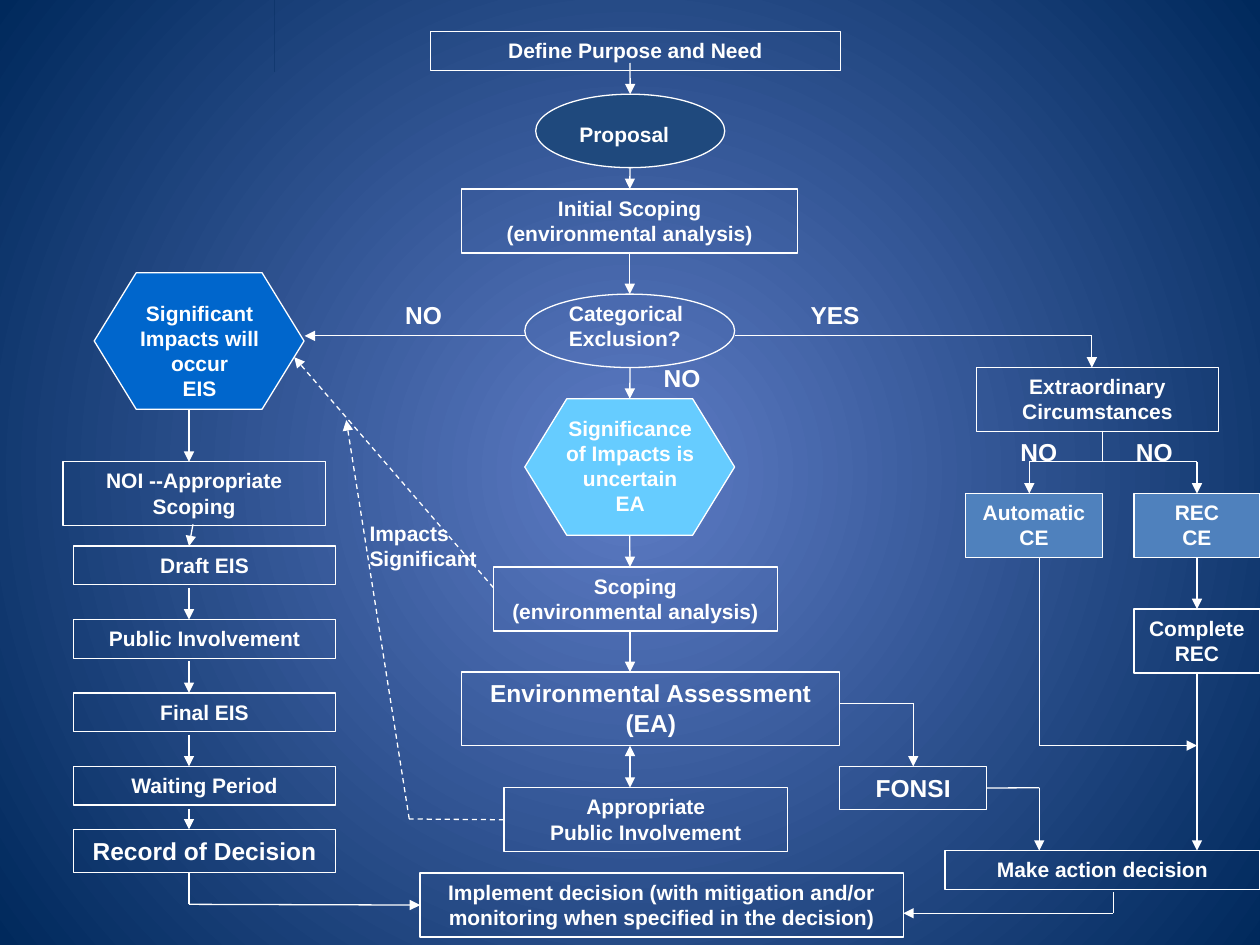
from lxml.etree import SubElement
from pptx import Presentation
from pptx.dml.color import RGBColor
from pptx.enum.dml import MSO_LINE
from pptx.enum.shapes import MSO_CONNECTOR, MSO_SHAPE
from pptx.enum.text import MSO_ANCHOR, MSO_AUTO_SIZE, PP_ALIGN
from pptx.oxml.ns import qn
from pptx.shapes.autoshape import Shape
from pptx.util import Cm, Pt

WHITE = RGBColor(0xFF, 0xFF, 0xFF)
GLOW = RGBColor(0x5E, 0x7C, 0xC5)
NAVY = RGBColor(0x00, 0x29, 0x5C)
DARK_BLUE = RGBColor(0x1F, 0x49, 0x7D)
SKY = RGBColor(0x66, 0xCC, 0xFF)
BLUE = RGBColor(0x00, 0x66, 0xCC)
STEEL = RGBColor(0x4F, 0x81, 0xBD)

TOP, LEFT, BOTTOM, RIGHT = range(4)
ONE_LINE, ONE_LARGE, TWO_LINES, TWO_LARGE = 0.78, 0.87, 1.29, 1.48
MAIN_X, EIS_X, REC_X = 12.7, 3.81, 24.13


def paint_background(s):
    """Fill the slide with a gradient that spreads from its centre."""
    fill = s.background.fill
    fill.gradient()
    for stop, color in zip(fill.gradient_stops, (GLOW, NAVY)):
        stop.color.rgb = color
    grad = s._element.find(".//" + qn("a:gradFill"))
    grad.remove(grad.find(qn("a:lin")))
    circle = SubElement(grad, qn("a:path"), {"path": "circle"})
    SubElement(circle, qn("a:fillToRect"), dict.fromkeys("ltrb", "50000"))


def add_title_band(s):
    """Add the band at the top, which takes the slide background as its fill."""
    sp = s.shapes.add_shape(MSO_SHAPE.RECTANGLE, Cm(5.54), 0, Cm(19.86), Cm(1.45))
    sp._element.remove(sp._element.find(qn("p:style")))
    sp._element.set("useBgFill", "1")


def write(sp, text, size, align):
    tf = sp.text_frame
    tf.word_wrap = True
    tf.auto_size = MSO_AUTO_SIZE.SHAPE_TO_FIT_TEXT
    tf.vertical_anchor = MSO_ANCHOR.TOP
    p = tf.paragraphs[0]
    p.text = text.replace("\n", "\v")
    p.alignment = align
    p.font.name = "Arial"
    p.font.size = Pt(size)
    p.font.bold = True
    p.font.color.rgb = WHITE


def add_outline(s, kind, x, y, w, h, color=None):
    sp = s.shapes.add_shape(kind, Cm(x), Cm(y), Cm(w), Cm(h))
    sp.shadow.inherit = False
    if color is None:
        sp.fill.background()
    else:
        sp.fill.solid()
        sp.fill.fore_color.rgb = color
    sp.line.color.rgb = WHITE
    sp.line.width = Pt(0.75)
    return sp


def add_box(s, text, x, y, w, h, color=None):
    sp = add_outline(s, MSO_SHAPE.RECTANGLE, x, y, w, h, color)
    size = 14 if h in (ONE_LARGE, TWO_LARGE) else 12
    write(sp, text, size, PP_ALIGN.CENTER)
    return sp


def add_label(s, text, x, y, w, h, size=12, align=PP_ALIGN.LEFT):
    tb = s.shapes.add_textbox(Cm(x), Cm(y), Cm(w), Cm(h))
    write(tb, text, size, align)


def add_route(s, *stops, head=False, tail=True, dashed=False):
    """Join the stops, each an (x, y) point or a (box, side) pair, by lines."""
    last = len(stops) - 2
    for i, (start, end) in enumerate(zip(stops, stops[1:])):
        start_joined, end_joined = (isinstance(stop[0], Shape) for stop in (start, end))
        x1, y1 = (0, 0) if start_joined else start
        x2, y2 = (0, 0) if end_joined else end
        line = s.shapes.add_connector(
            MSO_CONNECTOR.STRAIGHT, Cm(x1), Cm(y1), Cm(x2), Cm(y2))
        if start_joined:
            line.begin_connect(*start)
        if end_joined:
            line.end_connect(*end)
        line.line.color.rgb = WHITE
        line.line.width = Pt(0.75)
        if dashed:
            line.line.dash_style = MSO_LINE.DASH
        ln = line.line._get_or_add_ln()
        if head and i == 0:
            SubElement(ln, qn("a:headEnd"), {"type": "triangle"})
        if tail and i == last:
            SubElement(ln, qn("a:tailEnd"), {"type": "triangle"})
        SubElement(line._element.spPr, qn("a:effectLst"))


def add_main_column(s):
    add_box(s, "Define Purpose and Need", 8.68, 0.64, 8.26, ONE_LINE)
    proposal = add_outline(s, MSO_SHAPE.OVAL, 10.8, 1.9, 3.81, 1.48, DARK_BLUE)
    add_label(s, "Proposal", 11.43, 2.33, 3.39, 0.76)
    initial = add_box(s, "Initial Scoping\n(environmental analysis)",
                      9.31, 3.81, 6.77, TWO_LINES)
    exclusion = add_outline(s, MSO_SHAPE.OVAL, 10.58, 5.93, 4.23, 1.48)
    add_label(s, "Categorical\nExclusion?", 11.22, 5.93, 4.66, 1.27)
    uncertain = add_outline(s, MSO_SHAPE.FLOWCHART_PREPARATION,
                            10.58, 8.04, 4.23, 2.75, SKY)
    add_label(s, "Significance of Impacts is uncertain\nEA",
              11.01, 8.25, 3.39, 2.29, align=PP_ALIGN.CENTER)
    add_box(s, "Scoping\n(environmental analysis)", 9.95, 11.43, 5.72, TWO_LINES)
    add_box(s, "Environmental Assessment\n(EA)", 9.31, 13.55, 7.62, TWO_LARGE)
    involvement = add_box(s, "Appropriate\nPublic Involvement",
                          10.16, 15.88, 5.72, TWO_LINES)

    add_route(s, (MAIN_X, 1.27), (proposal, TOP))
    add_route(s, (MAIN_X, 3.39), (initial, TOP))
    add_route(s, (initial, BOTTOM), (exclusion, TOP))
    add_route(s, (MAIN_X, 7.41), (uncertain, TOP))
    add_route(s, (uncertain, BOTTOM), (MAIN_X, 11.43))
    add_route(s, (MAIN_X, 12.7), (MAIN_X, 13.55))
    add_route(s, (MAIN_X, 15.03), (MAIN_X, 15.88), head=True)
    add_route(s, (9.95, 11.85), (5.93, 7.2), dashed=True)
    add_route(s, (involvement, LEFT), (8.25, 16.51), (6.98, 8.47), dashed=True)
    add_label(s, "Impacts\nSignificant", 7.2, 10.37, 4.02, 1.27)


def add_eis_column(s):
    add_outline(s, MSO_SHAPE.FLOWCHART_PREPARATION, 1.9, 5.5, 4.23, 2.75, BLUE)
    add_label(s, "Significant Impacts will occur\nEIS",
              2.33, 5.93, 3.39, 2.29, align=PP_ALIGN.CENTER)
    add_box(s, "NOI --Appropriate Scoping", 1.27, 9.31, 5.29, TWO_LINES)
    steps = ["Draft EIS", "Public Involvement", "Final EIS", "Waiting Period"]
    pitch = 1.48
    for i, step in enumerate(steps):
        y = 11.01 + i * pitch
        add_box(s, step, 1.48, y, 5.29, ONE_LINE)
        if i:
            add_route(s, (EIS_X, y - 0.64), (EIS_X, y))
    add_box(s, "Record of Decision", 1.48, 16.72, 5.29, ONE_LARGE)

    add_route(s, (10.58, 6.77), (6.14, 6.77))
    add_route(s, (EIS_X, 8.25), (EIS_X, 9.31))
    add_route(s, (3.89, 10.57), (EIS_X, 11.01))
    add_route(s, (EIS_X, 16.3), (EIS_X, 16.72))


def add_exclusion_column(s):
    add_box(s, "Extraordinary\nCircumstances", 19.69, 7.41, 4.87, TWO_LINES)
    add_box(s, "Automatic\nCE", 19.47, 9.95, 2.75, TWO_LINES, STEEL)
    rec = add_box(s, "REC\nCE", 22.86, 9.95, 2.54, TWO_LINES, STEEL)
    complete = add_box(s, "Complete\nREC", 22.86, 12.28, 2.54, TWO_LINES)

    add_route(s, (14.82, 6.77), (22.01, 6.77), (22.01, 7.41))
    add_route(s, (22.23, 8.68), (22.23, 9.31), tail=False)
    add_route(s, (22.23, 9.31), (20.75, 9.31), (20.75, 9.95))
    add_route(s, (22.23, 9.31), (REC_X, 9.31), (rec, TOP))
    add_route(s, (rec, BOTTOM), (complete, TOP))
    add_route(s, (complete, BOTTOM), (REC_X, 17.15))
    add_route(s, (20.95, 11.23), (20.95, 15.03), (REC_X, 15.03))


def add_decisions(s):
    fonsi = add_box(s, "FONSI", 16.93, 15.45, 2.96, ONE_LARGE)
    add_box(s, "Make action decision", 19.05, 17.15, 6.35, ONE_LINE)
    implement = add_box(
        s, "Implement decision (with mitigation and/or monitoring "
        "when specified in the decision)", 8.47, 17.6, 9.74, TWO_LINES)

    add_route(s, (16.93, 14.18), (18.41, 14.18), (fonsi, TOP))
    add_route(s, (fonsi, RIGHT), (20.95, 15.88), (20.95, 17.15))
    add_route(s, (EIS_X, 17.58), (EIS_X, 18.23), (implement, LEFT))
    add_route(s, (22.44, 17.99), (22.44, 18.41), (18.21, 18.41))


def add_answers(s):
    for text, x, y, w in [("NO", 7.92, 5.93, 2.65), ("YES", 16.09, 5.93, 3.18),
                          ("NO", 13.13, 7.2, 2.75), ("NO", 20.32, 8.68, 3.18),
                          ("NO", 22.65, 8.68, 3.18)]:
        add_label(s, text, x, y, w, 0.85, size=14)


def main():
    prs = Presentation()
    prs.slide_width, prs.slide_height = Cm(25.4), Cm(19.05)
    s = prs.slides.add_slide(prs.slide_layouts[6])
    paint_background(s)
    add_title_band(s)
    add_main_column(s)
    add_eis_column(s)
    add_exclusion_column(s)
    add_decisions(s)
    add_answers(s)
    prs.save("out.pptx")


if __name__ == "__main__":
    main()
